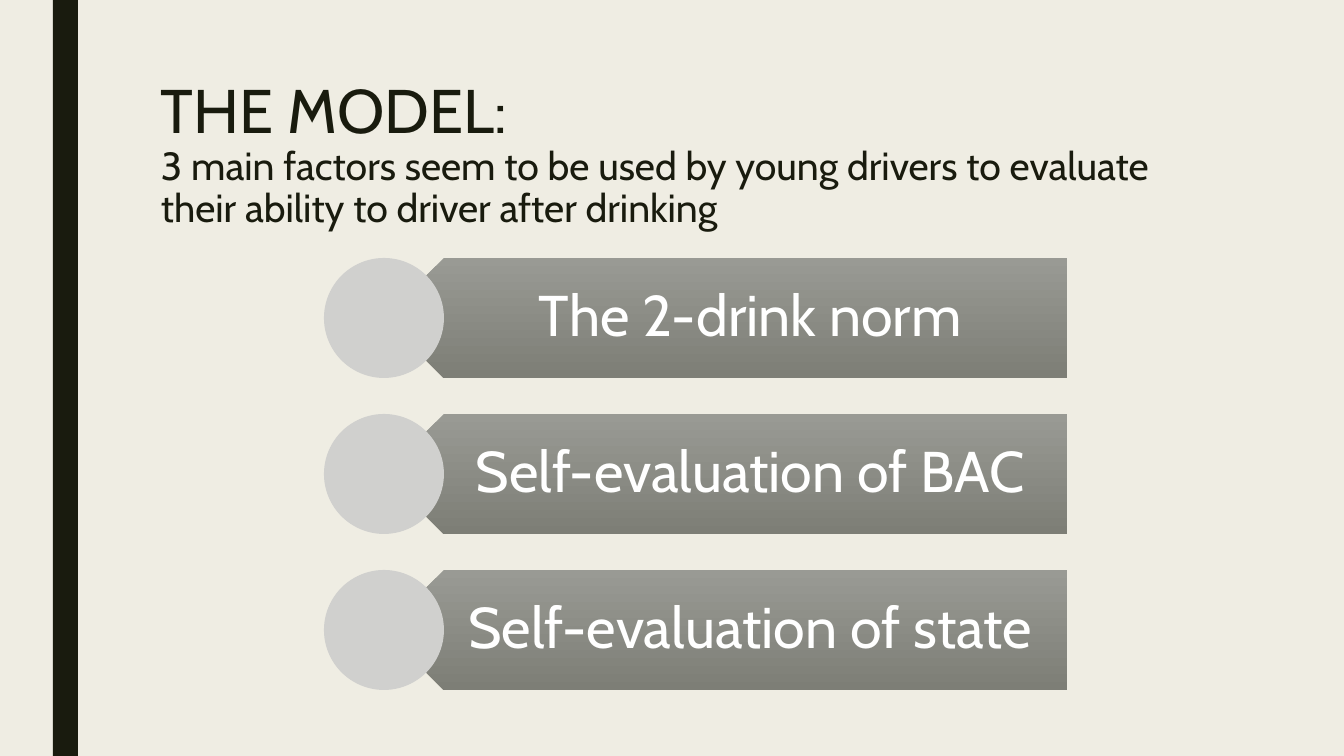
"""Build the slide on the three factors in the drink-driving model."""
from pptx import Presentation
from pptx.dml.color import RGBColor
from pptx.enum.shapes import MSO_SHAPE
from pptx.enum.text import MSO_ANCHOR, PP_ALIGN
from pptx.util import Pt

RECT, PENTAGON, OVAL = MSO_SHAPE.RECTANGLE, MSO_SHAPE.PENTAGON, MSO_SHAPE.OVAL
TOP, MIDDLE = MSO_ANCHOR.TOP, MSO_ANCHOR.MIDDLE
LEFT, CENTER = PP_ALIGN.LEFT, PP_ALIGN.CENTER

TITLE = [
    ("THE MODEL:", 44),
    ("3 main factors seem to be used by young drivers to evaluate "
     "their ability to driver after drinking", 28),
]
FACTORS = ["The 2-drink norm", "Self-evaluation of BAC", "Self-evaluation of state"]

COLORS = {
    "background": "EFEDE3", "ink": "191B0E", "circle": "D0D0CE",
    "bar_top": "999A94", "bar_bottom": "7D7E76", "label": "FFFFFF",
}
FONT = "Cabin"
PX = 914400 / 100.8
WIDTH, HEIGHT = 1344, 756
STRIPE = (53, 0, 25, HEIGHT)
TITLE_BOX = (151, 76, 1058, 163)
CIRCLE_X, ROW_Y, ROW_H, ROW_STEP = 324, 258, 120, 156
BAR_X, BAR_RIGHT = CIRCLE_X + ROW_H // 2, 1067
LABEL_X = BAR_X + ROW_H // 4
TITLE_FORMAT = {"anchor": TOP, "align": LEFT, "spacing": 0.89,
                "insets": (10, 5, 10, 5), "color": "ink"}
LABEL_FORMAT = {"anchor": MIDDLE, "align": CENTER, "spacing": 0.9,
                "insets": (52, 17, 32, 17), "color": "label"}


def emu(px):
    return round(px * PX)


def rgb(name):
    return RGBColor.from_string(COLORS[name])


def add_shape(s, kind, box, color=None):
    sp = s.shapes.add_shape(kind, *map(emu, box))
    sp.shadow.inherit = False
    sp.line.fill.background()
    if color:
        sp.fill.solid()
        sp.fill.fore_color.rgb = rgb(color)
    return sp


def add_bar(s, box):
    sp = add_shape(s, PENTAGON, box)
    sp.element.spPr.xfrm.set("flipH", "1")
    sp.fill.gradient()
    sp.fill.gradient_angle = 270
    for stop, color, position in zip(sp.fill.gradient_stops, ("bar_top", "bar_bottom"), (0, 1)):
        stop.color.rgb = rgb(color)
        stop.position = position


def add_text(s, box, lines, fmt):
    tf = s.shapes.add_textbox(*map(emu, box)).text_frame
    tf.word_wrap = True
    tf.vertical_anchor = fmt["anchor"]
    for side, inset in zip(("left", "top", "right", "bottom"), fmt["insets"]):
        setattr(tf, f"margin_{side}", emu(inset))
    p = tf.paragraphs[0]
    p.alignment, p.line_spacing = fmt["align"], fmt["spacing"]
    for i, (text, size) in enumerate(lines):
        if i:
            p.add_line_break()
        r = p.add_run()
        r.text = text
        for name, value in {"name": FONT, "size": Pt(size)}.items():
            setattr(r.font, name, value)
        r.font.color.rgb = rgb(fmt["color"])


def main():
    prs = Presentation()
    prs.slide_width, prs.slide_height = emu(WIDTH), emu(HEIGHT)
    s = prs.slides.add_slide(prs.slide_layouts[6])
    s.background.fill.solid()
    s.background.fill.fore_color.rgb = rgb("background")
    add_shape(s, RECT, STRIPE, "ink")
    add_text(s, TITLE_BOX, TITLE, TITLE_FORMAT)
    for i, factor in enumerate(FACTORS):
        y = ROW_Y + i * ROW_STEP
        add_bar(s, (BAR_X, y, BAR_RIGHT - BAR_X, ROW_H))
        add_text(s, (LABEL_X, y, BAR_RIGHT - LABEL_X, ROW_H), [(factor, 41)], LABEL_FORMAT)
        add_shape(s, OVAL, (CIRCLE_X, y, ROW_H, ROW_H), "circle")
    prs.save("out.pptx")


if __name__ == "__main__":
    main()
